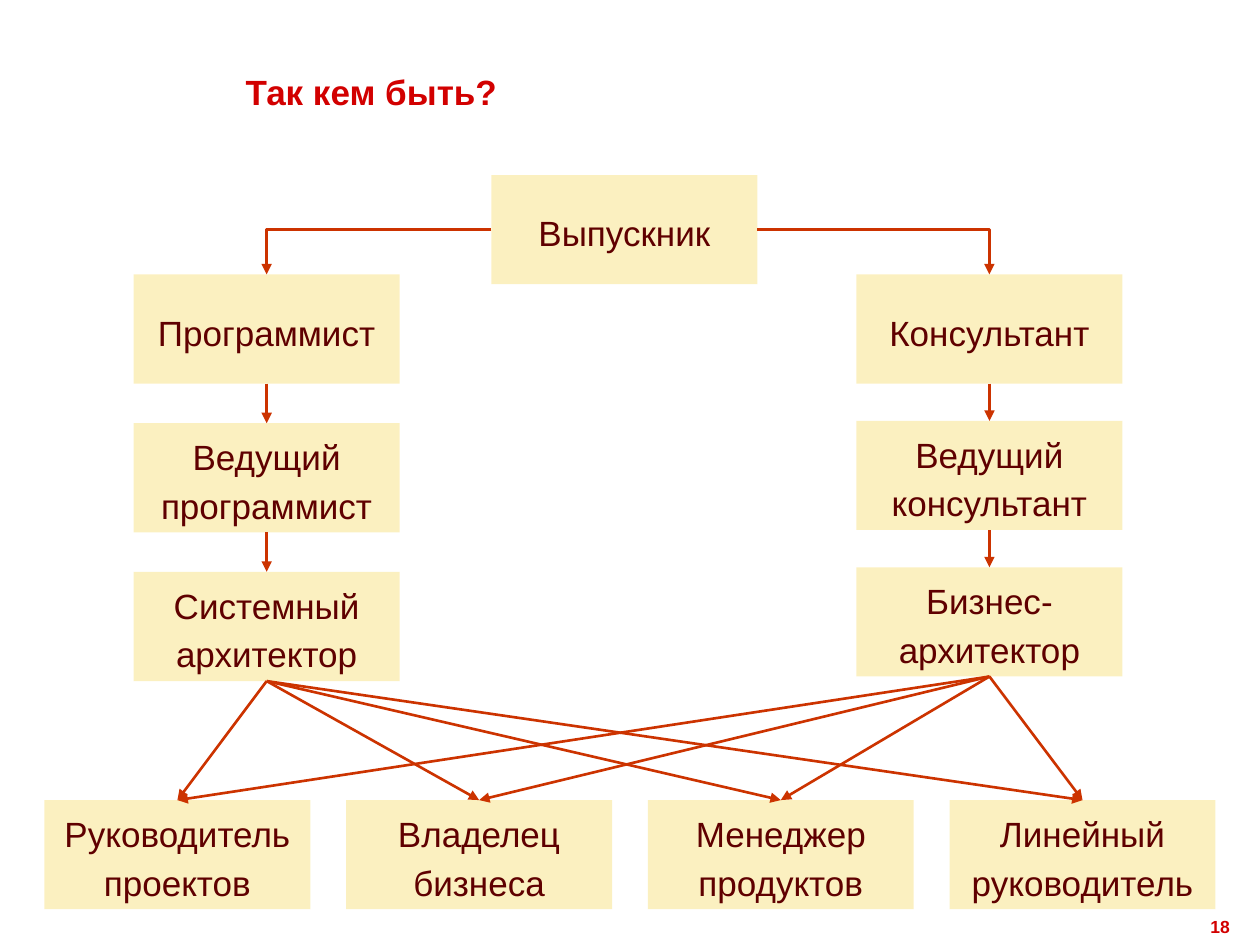
from dataclasses import dataclass

from lxml import etree
from pptx import Presentation
from pptx.dml.color import RGBColor
from pptx.enum import shapes, text
from pptx.oxml.ns import qn
from pptx.shapes.autoshape import Shape
from pptx.slide import Slide
from pptx.text.text import TextFrame
from pptx.util import Pt


@dataclass(frozen=True)
class Theme:
    font: str = "Arial"
    accent: RGBColor = RGBColor(0xD2, 0x00, 0x00)
    box_fill: RGBColor = RGBColor(0xF9, 0xE3, 0x83)
    box_opacity: int = 50
    box_text: RGBColor = RGBColor(0x5F, 0x00, 0x00)
    arrow: RGBColor = RGBColor(0xCC, 0x33, 0x00)
    arrow_width: float = 1.5
    body_size: int = 20
    number_size: int = 10


@dataclass(frozen=True)
class Role:
    name: str
    left: float
    top: float


@dataclass(frozen=True)
class Track:
    """A career ladder, drawn downwards from the shared first level."""
    names: tuple[str, ...]
    left: float
    step: float
    root_site: int


THEME = Theme()
BOX_WIDTH, BOX_HEIGHT = 152, 62.4
TOP, LEFT, BOTTOM, RIGHT = range(4)  # connection sites of a rectangle

GRADUATE = Role("Выпускник", 280.8, 100)
TRACK_TOP = 156.8
TRACKS = (
    Track(("Программист", "Ведущий программист", "Системный архитектор"), 76.4, 85, LEFT),
    Track(("Консультант", "Ведущий консультант", "Бизнес-архитектор"), 489.4, 83.7, RIGHT),
)
GOAL_LEFT, GOAL_TOP, GOAL_STEP = 25.4, 457.2, 172.4
GOALS = ("Руководитель проектов", "Владелец бизнеса", "Менеджер продуктов", "Линейный руководитель")


def write(frame: TextFrame, words: str, size: int, color: RGBColor, bold: bool,
          alignment: text.PP_ALIGN, line_spacing: float = 1.0) -> None:
    frame.word_wrap = True
    paragraph = frame.paragraphs[0]
    paragraph.alignment = alignment
    paragraph.line_spacing = line_spacing
    run = paragraph.add_run()
    run.text = words
    run.font.name = THEME.font
    run.font.size = Pt(size)
    run.font.bold = bold
    run.font.color.rgb = color


def add_title(slide: Slide, words: str) -> None:
    title = slide.shapes.title
    title.left, title.top, title.width, title.height = Pt(133.2), Pt(12.2), Pt(380.2), Pt(85)
    title.text_frame.vertical_anchor = text.MSO_ANCHOR.MIDDLE
    write(title.text_frame, words, THEME.body_size, THEME.accent, True, text.PP_ALIGN.LEFT, 0.8)


def add_page_number(slide: Slide, number: str) -> None:
    box = slide.shapes.add_textbox(Pt(649.4), Pt(519.8), Pt(60.5), Pt(20.2))
    write(box.text_frame, number, THEME.number_size, THEME.accent, True, text.PP_ALIGN.RIGHT)


def add_role(slide: Slide, role: Role) -> Shape:
    box = slide.shapes.add_shape(shapes.MSO_SHAPE.RECTANGLE, Pt(role.left), Pt(role.top),
                                 Pt(BOX_WIDTH), Pt(BOX_HEIGHT))
    box.shadow.inherit = False
    box.fill.solid()
    box.fill.fore_color.rgb = THEME.box_fill
    color = box._element.spPr.find(f"{qn('a:solidFill')}/{qn('a:srgbClr')}")
    etree.SubElement(color, qn("a:alpha"), val=str(THEME.box_opacity * 1000))
    box.line.fill.background()
    box.text_frame.vertical_anchor = text.MSO_ANCHOR.MIDDLE
    write(box.text_frame, role.name, THEME.body_size, THEME.box_text, False,
          text.PP_ALIGN.CENTER, 1.15)
    return box


def add_arrow(slide: Slide, start: Shape, end: Shape, start_site: int = BOTTOM) -> None:
    """Join start to the top of end; an arrow from a side turns one corner."""
    bent = start_site != BOTTOM
    kind = shapes.MSO_CONNECTOR.ELBOW if bent else shapes.MSO_CONNECTOR.STRAIGHT
    arrow = slide.shapes.add_connector(kind, 0, 0, 0, 0)
    arrow.begin_connect(start, start_site)
    arrow.end_connect(end, TOP)
    arrow.line.color.rgb = THEME.arrow
    arrow.line.width = Pt(THEME.arrow_width)
    properties = arrow._element.spPr
    if bent:
        properties.find(qn("a:prstGeom")).set("prst", "bentConnector2")
    etree.SubElement(properties.find(qn("a:ln")), qn("a:tailEnd"), type="triangle")
    etree.SubElement(properties, qn("a:effectLst"))


def add_track(slide: Slide, track: Track, graduate: Shape) -> Shape:
    """Draw the ladder and return its last box."""
    previous, site = graduate, track.root_site
    for level, name in enumerate(track.names):
        box = add_role(slide, Role(name, track.left, TRACK_TOP + level * track.step))
        add_arrow(slide, previous, box, site)
        previous, site = box, BOTTOM
    return previous


def main() -> None:
    presentation = Presentation()
    presentation.slide_width, presentation.slide_height = Pt(720), Pt(540)
    slide = presentation.slides.add_slide(presentation.slide_layouts[5])
    add_title(slide, "Так кем быть?")
    add_page_number(slide, "18")

    graduate = add_role(slide, GRADUATE)
    architects = [add_track(slide, track, graduate) for track in TRACKS]
    goals = [add_role(slide, Role(name, GOAL_LEFT + column * GOAL_STEP, GOAL_TOP))
             for column, name in enumerate(GOALS)]
    for architect in architects:
        for goal in goals:
            add_arrow(slide, architect, goal)

    presentation.save("out.pptx")


if __name__ == "__main__":
    main()
